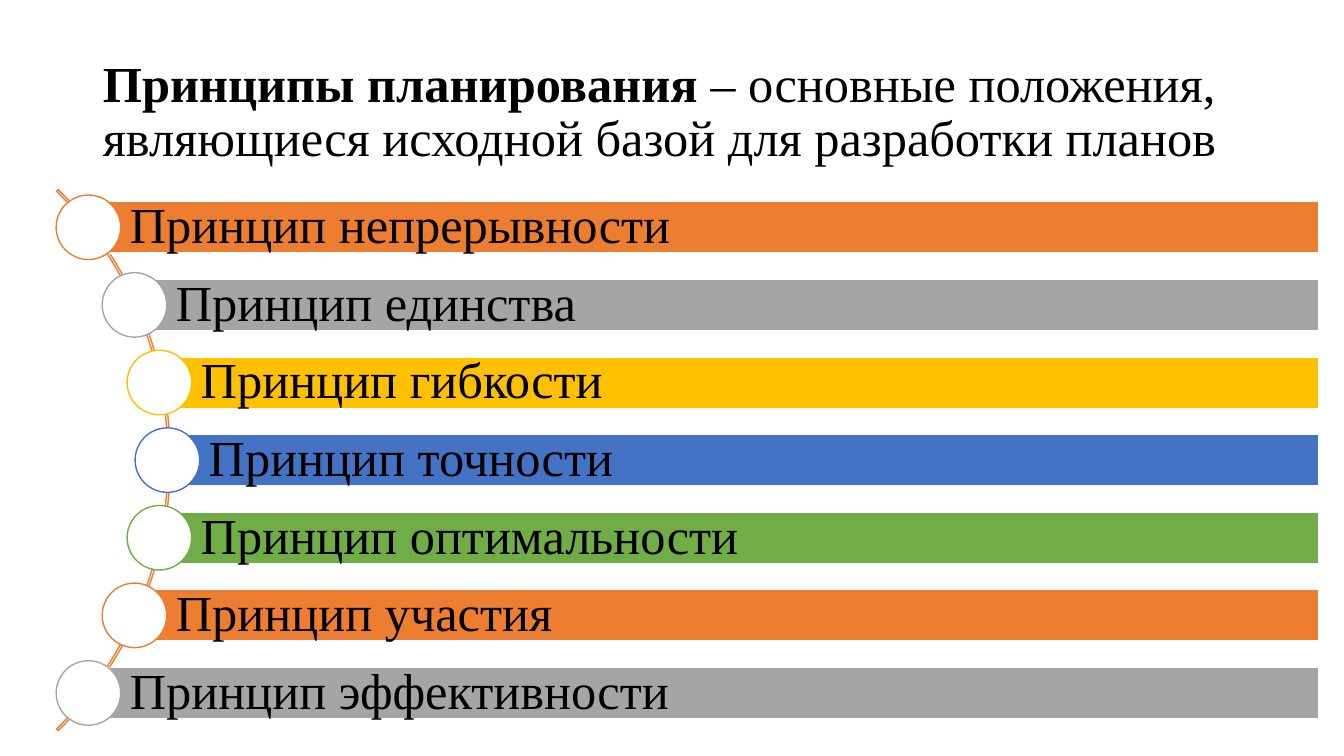
"""Build a slide listing the seven principles of planning along an arc."""
from dataclasses import dataclass
from math import sqrt

from pptx import Presentation
from pptx.dml.color import RGBColor
from pptx.enum.shapes import MSO_SHAPE
from pptx.enum.text import MSO_ANCHOR, MSO_AUTO_SIZE, PP_ALIGN
from pptx.shapes.autoshape import Shape
from pptx.shapes.group import GroupShape
from pptx.slide import Slide
from pptx.text.text import TextFrame
from pptx.util import Inches, Pt

BLACK = RGBColor(0x00, 0x00, 0x00)
WHITE = RGBColor(0xFF, 0xFF, 0xFF)
ORANGE = RGBColor(0xED, 0x7D, 0x31)
GRAY = RGBColor(0xA5, 0xA5, 0xA5)
GOLD = RGBColor(0xFF, 0xC0, 0x00)
BLUE = RGBColor(0x44, 0x72, 0xC4)
GREEN = RGBColor(0x70, 0xAD, 0x47)

FONT = "Times New Roman"
ARC_LEFT, ARC_TOP, ARC_SIZE = -5.9, 0.77, 7.59
CURVE_CENTER, CURVE_RADIUS = -2.14, 3.8
FIRST_TOP, ROW_STEP = 2.0, 0.77
BAR_HEIGHT, BAR_RIGHT = 0.51, 13.08
CIRCLE_SIZE = 0.64


@dataclass(frozen=True)
class Principle:
    name: str
    color: RGBColor


PRINCIPLES = [
    Principle("Принцип непрерывности", ORANGE),
    Principle("Принцип единства", GRAY),
    Principle("Принцип гибкости", GOLD),
    Principle("Принцип точности", BLUE),
    Principle("Принцип оптимальности", GREEN),
    Principle("Принцип участия", ORANGE),
    Principle("Принцип эффективности", GRAY),
]


def format_text(frame: TextFrame) -> None:
    frame.word_wrap = True
    frame.auto_size = MSO_AUTO_SIZE.NONE
    frame.vertical_anchor = MSO_ANCHOR.MIDDLE
    for para in frame.paragraphs:
        para.alignment = PP_ALIGN.LEFT
        para.line_spacing = 0.9
        for span in para.runs:
            span.font.name = FONT
            span.font.size = Pt(36)
            span.font.color.rgb = BLACK


def add_outlined(group: GroupShape, kind: MSO_SHAPE, left: float, top: float,
                 width: float, height: float, line: RGBColor) -> Shape:
    shape = group.shapes.add_shape(
        kind, Inches(left), Inches(top), Inches(width), Inches(height))
    shape.shadow.inherit = False
    shape.line.color.rgb = line
    shape.line.width = Pt(1)
    return shape


def add_title(page: Slide) -> None:
    title = page.shapes.title
    title.left, title.top = Inches(0.92), Inches(0.4)
    title.width, title.height = Inches(11.5), Inches(1.45)
    title.text_frame.text = "Принципы планирования"
    para = title.text_frame.paragraphs[0]
    para.runs[0].font.bold = True
    rest = para.add_run()
    rest.text = " – основные положения, являющиеся исходной базой для разработки планов"
    rest.font.bold = False
    format_text(title.text_frame)


def add_arc(group: GroupShape) -> None:
    arc = add_outlined(group, MSO_SHAPE.BLOCK_ARC, ARC_LEFT, ARC_TOP,
                       ARC_SIZE, ARC_SIZE, ORANGE)
    arc.fill.background()
    for index, value in enumerate((189, 27, 0.003)):
        arc.adjustments[index] = value


def add_principle(group: GroupShape, row: int, principle: Principle) -> None:
    offset = (row - (len(PRINCIPLES) - 1) / 2) * ROW_STEP
    left = CURVE_CENTER + sqrt(CURVE_RADIUS ** 2 - offset ** 2)
    top = FIRST_TOP + row * ROW_STEP
    bar = add_outlined(group, MSO_SHAPE.RECTANGLE, left, top,
                       BAR_RIGHT - left, BAR_HEIGHT, WHITE)
    bar.fill.solid()
    bar.fill.fore_color.rgb = principle.color
    frame = bar.text_frame
    frame.text = principle.name
    frame.margin_left = Inches(0.41)
    frame.margin_top = frame.margin_right = frame.margin_bottom = Inches(0.1)
    format_text(frame)

    circle = add_outlined(group, MSO_SHAPE.OVAL, left - CIRCLE_SIZE / 2,
                          top + (BAR_HEIGHT - CIRCLE_SIZE) / 2,
                          CIRCLE_SIZE, CIRCLE_SIZE, principle.color)
    circle.fill.solid()
    circle.fill.fore_color.rgb = WHITE


def main() -> None:
    deck = Presentation()
    deck.slide_width, deck.slide_height = Inches(13.33), Inches(7.5)
    page = deck.slides.add_slide(deck.slide_layouts.get_by_name("Title Only"))
    add_title(page)
    group = page.shapes.add_group_shape()
    add_arc(group)
    for row, principle in enumerate(PRINCIPLES):
        add_principle(group, row, principle)
    deck.save("out.pptx")


if __name__ == "__main__":
    main()
